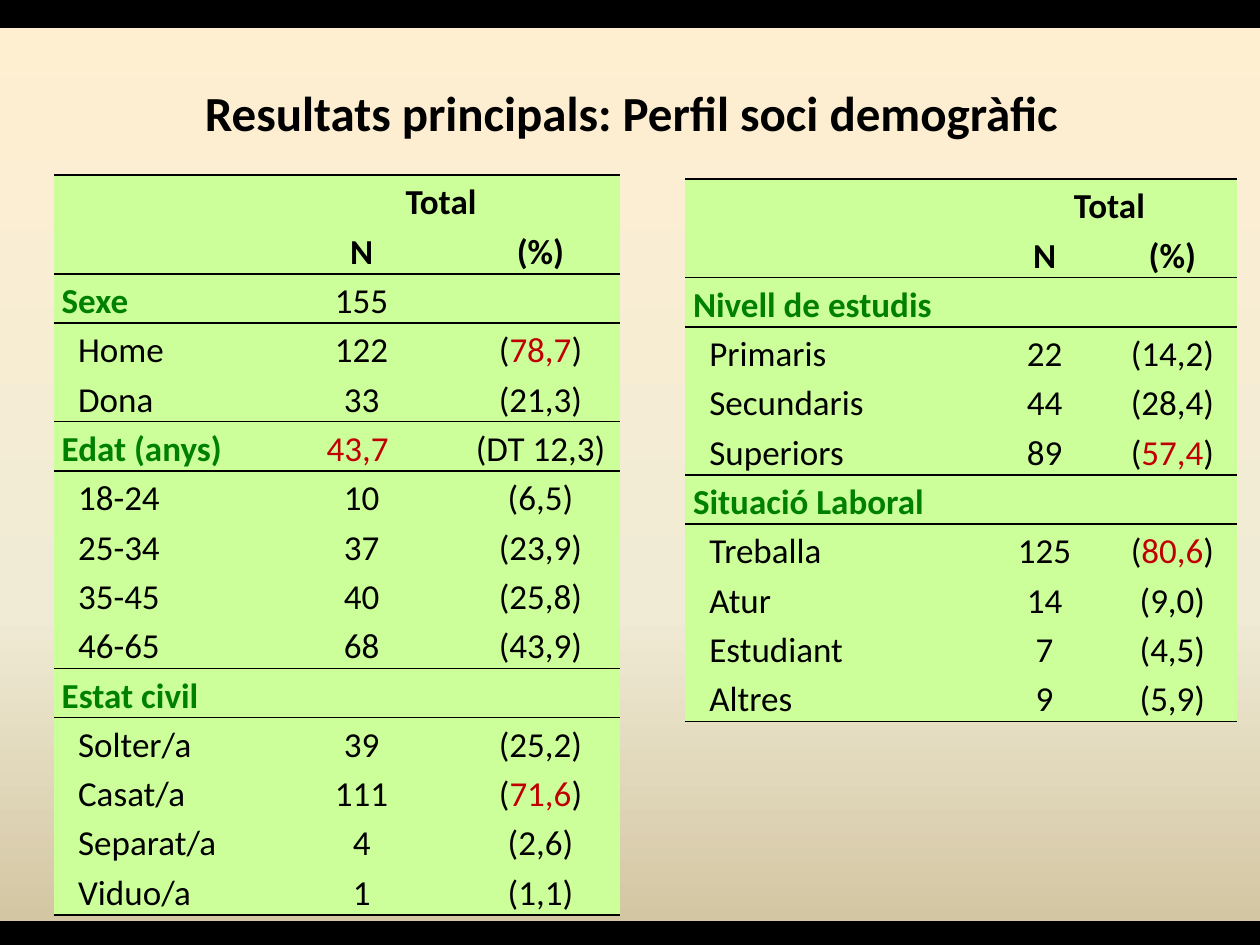
from copy import deepcopy

from lxml.etree import SubElement
from pptx import Presentation
from pptx.dml.color import RGBColor
from pptx.enum.shapes import MSO_SHAPE
from pptx.enum.text import MSO_ANCHOR, MSO_AUTO_SIZE, PP_ALIGN
from pptx.oxml.ns import qn
from pptx.util import Inches, Pt

BLACK, GREEN, RED, LIME = "000000", "008000", "C00000", "CCFF99"
NO_GRID_STYLE = "{2D5ABB26-0587-4C30-8999-92F81FD0307C}"


def color(value):
    return RGBColor.from_string(value)


def add_border(cell, side, points):
    line = SubElement(cell._tc.get_or_add_tcPr(), qn(f"a:{side}"), w=str(Pt(points)))
    fill = SubElement(line, qn("a:solidFill"))
    SubElement(fill, qn("a:srgbClr"), val=BLACK)


deck = Presentation()
deck.slide_width, deck.slide_height = Inches(10), Inches(7.5)
page = deck.slides.add_slide(deck.slide_layouts[5])

background = page.background.fill
background.gradient()
background.gradient_angle = 270
stop_list = page.element.find(f".//{qn('a:gsLst')}")
stop_list.append(deepcopy(stop_list[0]))
shades = [(0, "FFEFD1"), (0.65, "F0EBD5"), (1, "D1C39F")]
for stop, (position, shade) in zip(background.gradient_stops, shades):
    stop.position = position
    stop.color.rgb = color(shade)

for top in (0, 7.32):
    bar = page.shapes.add_shape(MSO_SHAPE.RECTANGLE, 0, Inches(top), Inches(10), Inches(0.21))
    bar.shadow.inherit = False
    bar.fill.solid()
    bar.fill.fore_color.rgb = color(BLACK)
    bar.line.color.rgb = color(BLACK)
    bar.line.width = Pt(2)

title = page.shapes.title
title.left, title.top, title.width, title.height = map(Inches, (0.52, 0.6, 8.98, 0.57))
frame = title.text_frame
frame.text = "Resultats principals: Perfil soci demogràfic"
frame.auto_size = MSO_AUTO_SIZE.NONE
frame.vertical_anchor = MSO_ANCHOR.MIDDLE
para = frame.paragraphs[0]
para.alignment = PP_ALIGN.CENTER
title_format = {"name": "Calibri", "size": Pt(28), "bold": True}
for name, value in title_format.items():
    setattr(para.font, name, value)
para.font.color.rgb = color(BLACK)

header = [("", "Total", ""), ("", "N", "(%)")]
# Asterisks enclose the figures shown in red.
tables = [
    {
        "left": 0.43, "top": 1.39, "columns": (1.65, 1.58, 1.26), "header_rule": 1.5,
        "groups": [
            header,
            [("Sexe", "155", ""), ("Home", "122", "(*78,7*)"), ("Dona", "33", "(21,3)")],
            [("Edat (anys)", "*43,7 *", "(DT 12,3)"), ("18-24", "10", "(6,5)"),
             ("25-34", "37", "(23,9)"), ("35-45", "40", "(25,8)"), ("46-65", "68", "(43,9)")],
            [("Estat civil", "", ""), ("Solter/a", "39", "(25,2)"),
             ("Casat/a", "111", "(*71,6*)"), ("Separat/a", "4", "(2,6)"),
             ("Viduo/a", "1", "(1,1)")],
        ],
    },
    {
        "left": 5.44, "top": 1.42, "columns": (2.35, 1, 1.03), "header_rule": 1,
        "groups": [
            header,
            [("Nivell de estudis", "", ""), ("Primaris", "22", "(14,2)"),
             ("Secundaris", "44", "(28,4)"), ("Superiors", "89", "(*57,4*)")],
            [("Situació Laboral", "", ""), ("Treballa", "125", "(*80,6*)"),
             ("Atur", "14", "(9,0)"), ("Estudiant", "7", "(4,5)"), ("Altres", "9", "(5,9)")],
        ],
    },
]

for data in tables:
    row_count = sum(map(len, data["groups"]))
    holder = page.shapes.add_table(
        row_count, 3, Inches(data["left"]), Inches(data["top"]),
        Inches(sum(data["columns"])), Inches(0.38 * row_count))
    table = holder.table
    table.first_row = table.horz_banding = False
    table._tbl.tblPr.find(qn("a:tableStyleId")).text = NO_GRID_STYLE
    for column, width in zip(table.columns, data["columns"]):
        column.width = Inches(width)
    table.cell(0, 1).merge(table.cell(0, 2))

    row_index = 0
    for group_index, group in enumerate(data["groups"]):
        top_rule = data["header_rule"] if group_index < 2 else 1
        bottom_rule = data["header_rule"] if group_index == 0 else 1
        for place, texts in enumerate(group):
            for column_index, text in enumerate(texts):
                cell = table.cell(row_index, column_index)
                is_label = column_index == 0
                is_heading = is_label and place == 0
                indent = 0.19 if is_label and place > 0 else 0.06
                cell.margin_left, cell.margin_right = Inches(indent), Inches(0.06)
                cell.margin_top = cell.margin_bottom = 0
                if place == 0:
                    add_border(cell, "lnT", top_rule)
                if place == len(group) - 1:
                    add_border(cell, "lnB", bottom_rule)
                cell.fill.solid()
                cell.fill.fore_color.rgb = color(LIME)

                para = cell.text_frame.paragraphs[0]
                para.alignment = PP_ALIGN.JUSTIFY if is_label else PP_ALIGN.CENTER
                para.line_spacing = 1.15
                text_format = {"name": "Calibri", "size": Pt(20),
                               "bold": group_index == 0 or is_heading}
                for part_index, part in enumerate(text.split("*")):
                    if not part:
                        continue
                    span = para.add_run()
                    span.text = part
                    for name, value in text_format.items():
                        setattr(span.font, name, value)
                    shade = RED if part_index % 2 else GREEN if is_heading else BLACK
                    span.font.color.rgb = color(shade)
            row_index += 1

deck.save("out.pptx")
